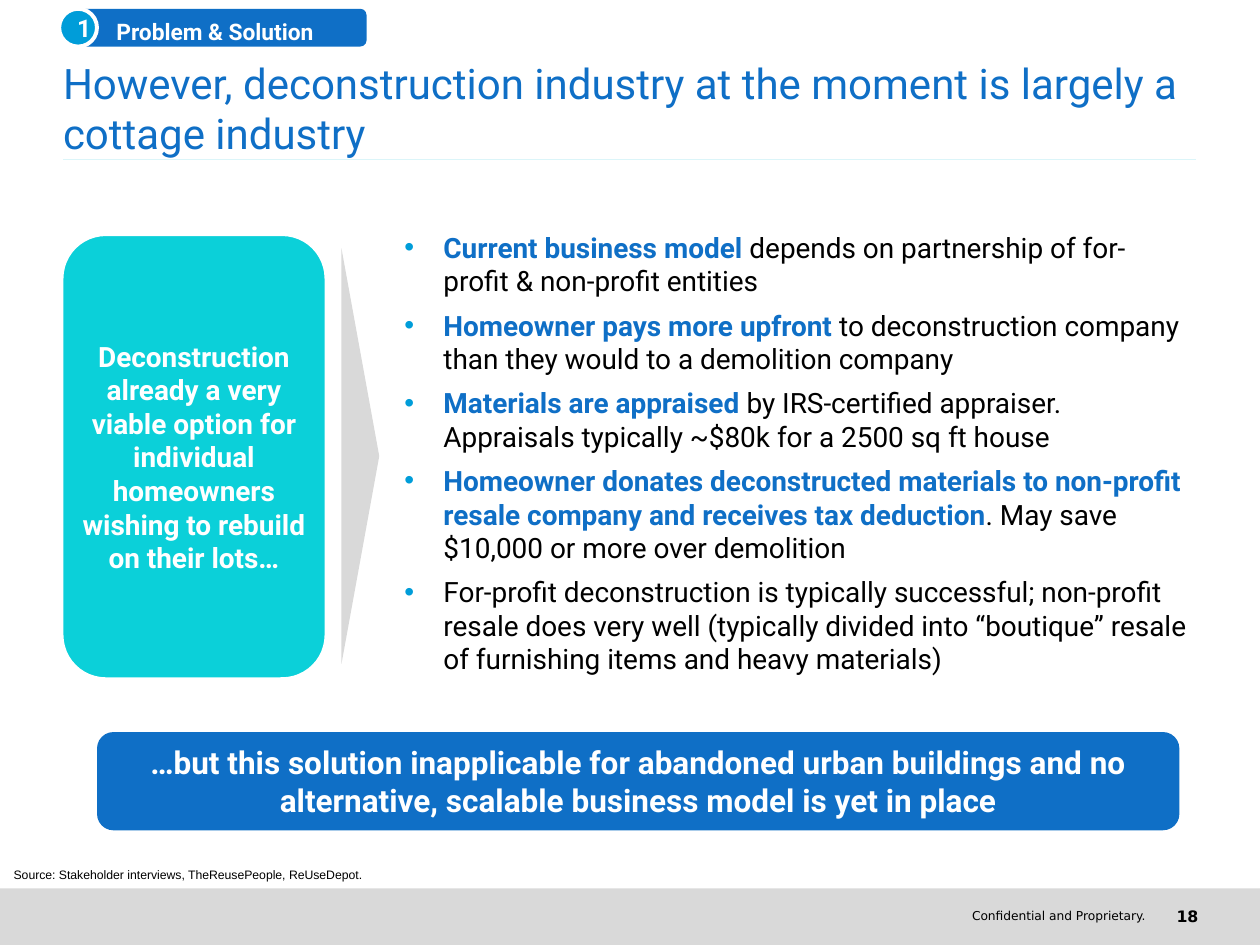
from dataclasses import dataclass

from lxml import etree
from pptx import Presentation
from pptx import util as u
from pptx.dml.color import RGBColor
from pptx.enum import shapes, text
from pptx.oxml import ns

COLUMNS, ROWS = 100, 75
UNIT = u.Inches(10) // COLUMNS  # columns and rows are equally large


@dataclass(frozen=True)
class Theme:
    blue: str = "0F6FC6"
    sky: str = "009DD9"
    teal: str = "0BD0D9"
    grey: str = "D9D9D9"
    pale: str = "DBF5F9"
    white: str = "FFFFFF"
    black: str = "000000"
    face: str = "Roboto"
    footer_face: str = "DejaVu Sans"
    source_face: str = "Arial"
    title: int = 24
    callout: int = 18
    body: int = 16
    badge: int = 14
    tag: int = 13
    number: int = 9
    small: int = 7


THEME = Theme()
LEFT, CENTER, RIGHT = text.PP_ALIGN.LEFT, text.PP_ALIGN.CENTER, text.PP_ALIGN.RIGHT
TOP, MIDDLE, BOTTOM = text.MSO_ANCHOR.TOP, text.MSO_ANCHOR.MIDDLE, text.MSO_ANCHOR.BOTTOM
INSETS = (1, 0.5, 1, 0.5)


@dataclass(frozen=True)
class Box:
    """A rectangle in grid columns and rows."""
    left: float
    top: float
    width: float
    height: float

    def inner(self, left, top, width, height):
        """A box whose position is counted from this box's corner."""
        return Box(self.left + left, self.top + top, width, height)

    def lengths(self):
        return [u.Emu(round(n * UNIT)) for n in (self.left, self.top, self.width, self.height)]


def color(value):
    return RGBColor.from_string(value)


def add_span(para, wording, size, ink, bold=False, face=THEME.face):
    span = para.add_run()
    span.text = wording
    span.font.name, span.font.size, span.font.bold = face, u.Pt(size), bold
    span.font.color.rgb = color(ink)


def set_frame(shape, anchor=MIDDLE, insets=INSETS, wrap=True):
    frame = shape.text_frame
    frame.auto_size = text.MSO_AUTO_SIZE.NONE
    frame.word_wrap, frame.vertical_anchor = wrap, anchor
    (frame.margin_left, frame.margin_top,
     frame.margin_right, frame.margin_bottom) = [u.Emu(round(n * UNIT)) for n in insets]
    return frame


def write(shape, wording, size, ink, align=LEFT, bold=False, face=THEME.face, **frame_options):
    para = set_frame(shape, **frame_options).paragraphs[0]
    para.alignment = align
    add_span(para, wording, size, ink, bold, face)


def add_label(page, box, wording, size, **options):
    label = page.shapes.add_textbox(*box.lengths())
    write(label, wording, size, THEME.black, anchor=TOP, **options)


def add_block(page, preset, box, fill, line=None, width=1):
    block = page.shapes.add_shape(preset, *box.lengths())
    block.shadow.inherit = False
    block.fill.solid()
    block.fill.fore_color.rgb = color(fill)
    if line:
        block.line.color.rgb, block.line.width = color(line), u.Pt(width)
    else:
        block.line.fill.background()
    return block


def place(placeholder, box):
    (placeholder.left, placeholder.top,
     placeholder.width, placeholder.height) = box.lengths()


def add_bullet(para, ink):
    props = para._p.get_or_add_pPr()
    props.set("marL", str(round(3.1 * UNIT)))
    props.set("indent", str(round(-3.1 * UNIT)))
    tint = etree.SubElement(props, ns.qn("a:buClr"))
    etree.SubElement(tint, ns.qn("a:srgbClr"), val=ink)
    etree.SubElement(props, ns.qn("a:buFont"), typeface="Arial")
    etree.SubElement(props, ns.qn("a:buChar"), char="•")


def add_footer(page, box):
    add_block(page, shapes.MSO_SHAPE.RECTANGLE, box, THEME.grey)
    add_label(page, box.inner(40.5, 1.1, 51.4, 2.2), "Confidential and Proprietary.", THEME.small,
              align=RIGHT, face=THEME.footer_face, insets=(0, 0.5, 1, 0.5))
    add_label(page, box.inner(89.9, 1, 6.2, 4), "18", THEME.number,
              align=RIGHT, bold=True, face=THEME.footer_face)
    add_label(page, box.inner(0.1, -2.2, 30.1, 2.2),
              "Source: Stakeholder interviews, TheReusePeople, ReUseDepot.",
              THEME.small, face=THEME.source_face, wrap=False)


def add_header(page, box, number, section, headline):
    """Section tag with its number, headline, and the rule along the bottom."""
    left, top, width, height = box.lengths()
    rule = page.shapes.add_connector(shapes.MSO_CONNECTOR.STRAIGHT,
                                     left, top + height, left + width, top + height)
    rule.line.color.rgb, rule.line.width = color(THEME.pale), u.Pt(0.5)
    etree.SubElement(rule._element.spPr, ns.qn("a:effectLst"))

    title = page.shapes.title
    place(title, box.inner(0, 4.4, box.width, 6.9))
    write(title, headline, THEME.title, THEME.blue, insets=(0, 0, 0, 0))

    tag = add_block(page, shapes.MSO_SHAPE.ROUNDED_RECTANGLE, box.inner(1.1, 0, 23, 3), THEME.blue)
    write(tag, section, THEME.tag, THEME.white, bold=True, anchor=BOTTOM, insets=(3, 0, 1, 0))
    badge = add_block(page, shapes.MSO_SHAPE.OVAL, box.inner(-0.3, 0, 3, 3),
                      THEME.sky, THEME.white, 2.25)
    write(badge, number, THEME.badge, THEME.white, CENTER, True)


def add_argument(page, box, premise, points):
    """Premise panel, arrowhead, and bulleted points of (emphasis, rest)."""
    panel = add_block(page, shapes.MSO_SHAPE.ROUNDED_RECTANGLE,
                      box.inner(0, 3.1, 21, 35.3), THEME.teal, THEME.white, 2)
    write(panel, premise, THEME.body, THEME.white, CENTER, True, insets=(0, 0.5, 0, 0.5))

    arrow = add_block(page, shapes.MSO_SHAPE.ISOSCELES_TRIANGLE,
                      box.inner(7.2, 19.2, 33, 3), THEME.grey)
    arrow.rotation = 90

    body = page.placeholders[1]
    place(body, box.inner(27.2, 0, box.width - 27.2, box.height))
    frame = set_frame(body, insets=(0, 0, 1, 0.5))
    for index, (emphasis, rest) in enumerate(points):
        para = frame.add_paragraph() if index else frame.paragraphs[0]
        para.level = 1
        add_bullet(para, THEME.sky)
        para.space_before, para.space_after = u.Pt(0), u.Pt(6)
        if emphasis:
            add_span(para, emphasis, THEME.body, THEME.blue, True)
        add_span(para, rest, THEME.body, THEME.black)


def add_conclusion(page, box, wording):
    banner = add_block(page, shapes.MSO_SHAPE.ROUNDED_RECTANGLE, box, THEME.blue)
    write(banner, wording, THEME.callout, THEME.white, CENTER, True, insets=(0, 0.5, 0, 0.5))


POINTS = [
    ("Current business model ", "depends on partnership of for-profit & non-profit entities"),
    ("Homeowner pays more upfront ",
     "to deconstruction company than they would to a demolition company"),
    ("Materials are appraised ",
     "by IRS-certified appraiser. Appraisals typically ~$80k for a 2500 sq ft house"),
    ("Homeowner donates deconstructed materials to non-profit resale company "
     "and receives tax deduction", ". May save $10,000 or more over demolition"),
    ("", "For-profit deconstruction is typically successful; non-profit resale does very well "
     "(typically divided into “boutique” resale of furnishing items and heavy materials)"),
]


def main():
    deck = Presentation()
    deck.slide_width, deck.slide_height = COLUMNS * UNIT, ROWS * UNIT
    page = deck.slides.add_slide(deck.slide_layouts[1])
    add_footer(page, Box(0, 70.5, COLUMNS, 4.5))
    add_header(page, Box(5, 0.7, 89.9, 11.95), "1", "Problem & Solution",
               "However, deconstruction industry at the moment is largely a cottage industry")
    add_argument(page, Box(4.9, 15.5, 90.3, 41.4),
                 "Deconstruction already a very viable option for individual homeowners "
                 "wishing to rebuild on their lots…", POINTS)
    add_conclusion(page, Box(7.7, 58.1, 85.9, 7.8),
                   "…but this solution inapplicable for abandoned urban buildings and no "
                   "alternative, scalable business model is yet in place")
    deck.save("out.pptx")


if __name__ == "__main__":
    main()
